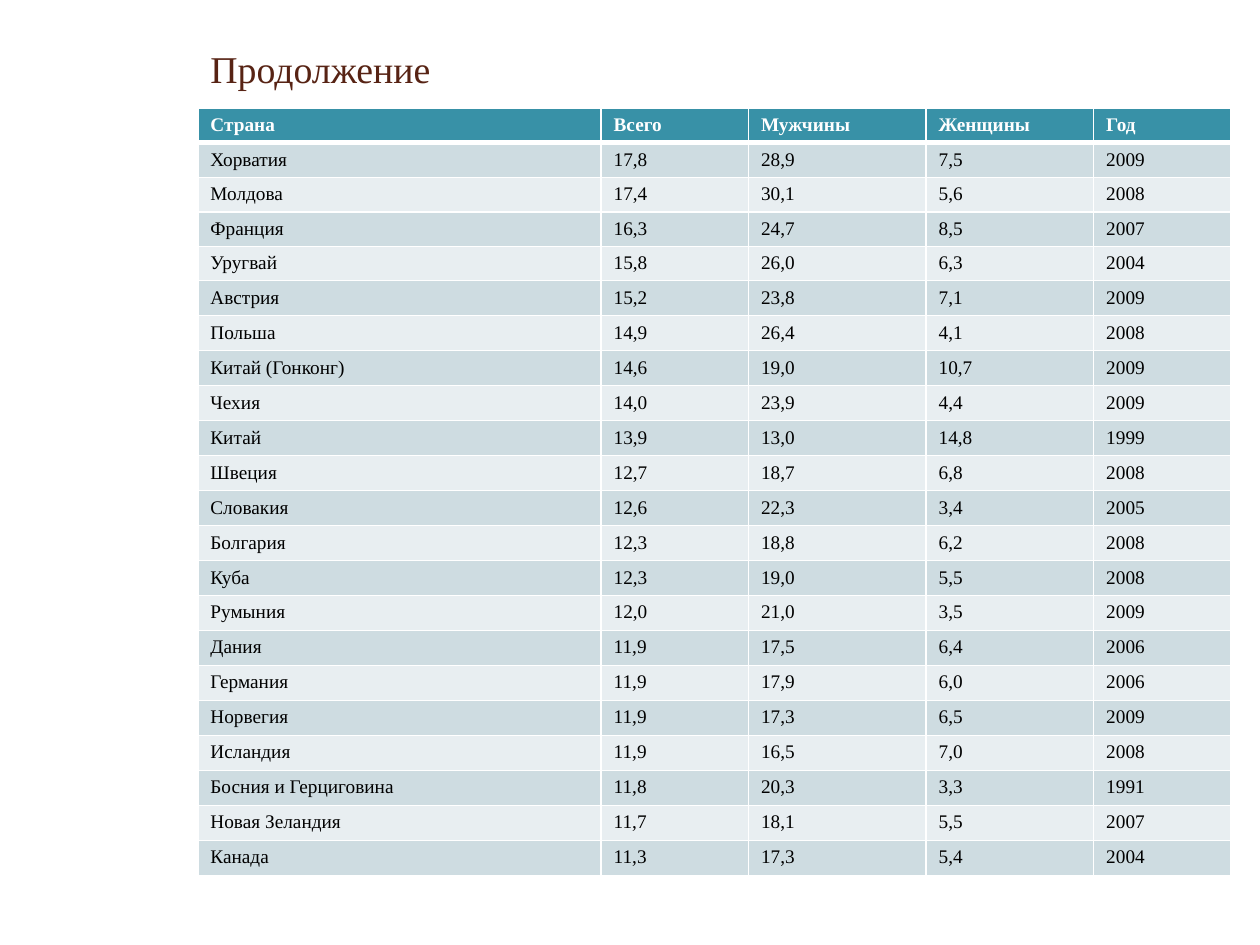
from lxml import etree
from pptx import Presentation, util as u
from pptx.dml.color import RGBColor
from pptx.enum import text
from pptx.oxml.ns import qn

# Content
TITLE = "Продолжение"
HEAD = ("Страна", "Всего", "Мужчины", "Женщины", "Год")
ROWS = [
    ("Хорватия", "17,8", "28,9", "7,5", "2009"),
    ("Молдова", "17,4", "30,1", "5,6", "2008"),
    ("Франция", "16,3", "24,7", "8,5", "2007"),
    ("Уругвай", "15,8", "26,0", "6,3", "2004"),
    ("Австрия", "15,2", "23,8", "7,1", "2009"),
    ("Польша", "14,9", "26,4", "4,1", "2008"),
    ("Китай (Гонконг)", "14,6", "19,0", "10,7", "2009"),
    ("Чехия", "14,0", "23,9", "4,4", "2009"),
    ("Китай", "13,9", "13,0", "14,8", "1999"),
    ("Швеция", "12,7", "18,7", "6,8", "2008"),
    ("Словакия", "12,6", "22,3", "3,4", "2005"),
    ("Болгария", "12,3", "18,8", "6,2", "2008"),
    ("Куба", "12,3", "19,0", "5,5", "2008"),
    ("Румыния", "12,0", "21,0", "3,5", "2009"),
    ("Дания", "11,9", "17,5", "6,4", "2006"),
    ("Германия", "11,9", "17,9", "6,0", "2006"),
    ("Норвегия", "11,9", "17,3", "6,5", "2009"),
    ("Исландия", "11,9", "16,5", "7,0", "2008"),
    ("Босния и Герциговина", "11,8", "20,3", "3,3", "1991"),
    ("Новая Зеландия", "11,7", "18,1", "5,5", "2007"),
    ("Канада", "11,3", "17,3", "5,4", "2004"),
]

# Look and grid, in inches
INK = {"title": "572314", "head": "3891A7", "odd": "CEDCE1",
       "even": "E8EEF1", "text": "000000", "line": "FFFFFF"}
FONT = "Times New Roman"
LEFT, TOP, WIDE = 1.57, 0.86, 8.2
COLS = (3.2, 1.17, 1.41, 1.33, 1.09)
TIGHT = 5                                 # the first rows are a little lower
LOW, HIGH = 1.37 / TIGHT, 4.72 / 17


def write(frame, words, size=11, color="text", bold=False):
    par = frame.paragraphs[0]
    par.alignment = text.PP_ALIGN.LEFT
    run = par.add_run()
    run.text = words
    font = run.font
    font.name, font.size, font.bold = FONT, u.Pt(size), bold
    font.color.rgb = RGBColor.from_string(INK[color])


def edge(cell, **widths):
    props = cell._tc.get_or_add_tcPr()
    for side in "LRTB":
        line = etree.SubElement(props, qn("a:ln" + side),
                                w=str(u.Pt(widths.get(side, 1))))
        fill = etree.SubElement(line, qn("a:solidFill"))
        etree.SubElement(fill, qn("a:srgbClr"), val=INK["line"])


def main():
    deck = Presentation()
    deck.slide_width, deck.slide_height = u.Inches(10), u.Inches(7.5)
    slide = deck.slides.add_slide(deck.slide_layouts[5])

    # Title
    title = slide.shapes.title
    title.left, title.top = u.Inches(LEFT), u.Inches(0.3)
    title.width, title.height = u.Inches(WIDE), u.Inches(0.48)
    title.text_frame.vertical_anchor = text.MSO_ANCHOR.MIDDLE
    write(title.text_frame, TITLE, size=21.6, color="title")

    # Table
    data = [HEAD] + ROWS
    high = [LOW if i < TIGHT else HIGH for i in range(len(data))]
    table = slide.shapes.add_table(
        len(data), len(COLS), u.Inches(LEFT), u.Inches(TOP),
        u.Inches(WIDE), u.Inches(sum(high))).table
    for col, wide in zip(table.columns, COLS):
        col.width = u.Inches(wide)
    for i, row in enumerate(data):
        table.rows[i].height = u.Inches(high[i])
        band = "head" if i == 0 else "odd" if i % 2 else "even"
        for j, words in enumerate(row):
            cell = table.cell(i, j)
            write(cell.text_frame, words, bold=i == 0,
                  color="text" if i else "line")
            edge(cell, T=3 if i == 1 else 1, B=1 if i else 3)
            cell.fill.solid()
            cell.fill.fore_color.rgb = RGBColor.from_string(INK[band])

    deck.save("out.pptx")


if __name__ == "__main__":
    main()
